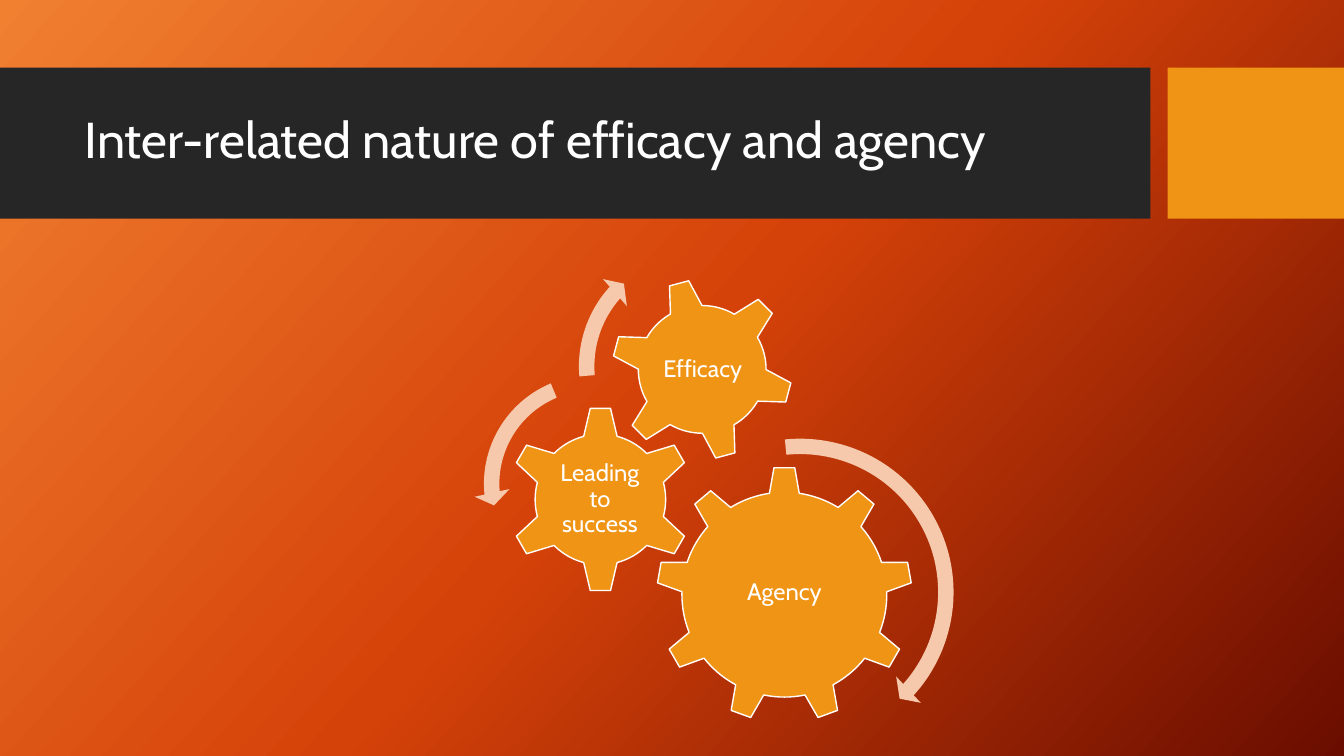
from copy import deepcopy

from pptx import Presentation
from pptx.dml.color import RGBColor
from pptx.enum.shapes import MSO_SHAPE
from pptx.enum.text import MSO_ANCHOR, MSO_AUTO_SIZE, PP_ALIGN
from pptx.oxml.ns import qn
from pptx.util import Inches, Pt

RECTANGLE = MSO_SHAPE.RECTANGLE
GEAR_SIX, GEAR_NINE = MSO_SHAPE.GEAR_6, MSO_SHAPE.GEAR_9
ARROW, LEFT_ARROW = MSO_SHAPE.CIRCULAR_ARROW, MSO_SHAPE.LEFT_CIRCULAR_ARROW
MIDDLE, NO_FIT = MSO_ANCHOR.MIDDLE, MSO_AUTO_SIZE.NONE
LEFT, CENTER = PP_ALIGN.LEFT, PP_ALIGN.CENTER

WHITE = RGBColor(0xFF, 0xFF, 0xFF)
CHARCOAL = RGBColor(0x26, 0x26, 0x26)
ORANGE = RGBColor(0xF0, 0x94, 0x15)
PEACH = RGBColor(0xF6, 0xC8, 0xAC)
FONT = "Cabin"

GRADIENT = [
    (0, RGBColor(0xF1, 0x80, 0x31)),
    (0.5, RGBColor(0xD5, 0x42, 0x09)),
    (1, RGBColor(0x6A, 0x0D, 0x00)),
]
GRADIENT_ANGLE = 360 - 42

TITLE = "Inter-related nature of efficacy and agency"
TITLE_BOX = (0.74, 0.82, 10.51, 1.18)
BANDS = [((0, 0.67, 11.41, 1.5), CHARCOAL), ((11.58, 0.67, 1.75, 1.5), ORANGE)]

GEARS = [
    ("Agency", GEAR_NINE, (6.51, 4.63, 2.54), 0, (7.02, 5.23, 1.52, 1.3)),
    ("Leading to success", GEAR_SIX, (5.03, 4.03, 1.85), 0, (5.49, 4.5, 0.92, 0.91)),
    ("Efficacy", GEAR_SIX, (6.06, 2.76, 1.81), 345, (6.46, 3.16, 1.02, 1.02)),
]
ARROWS = [
    (ARROW, (6.31, 4.25, 3.25), (0.047, 2.99, 25.169, 158.598, 0.055)),
    (LEFT_ARROW, (4.7, 3.62, 2.36), (0.065, 4.3, 104.891, 148.378, 0.075)),
    (ARROW, (5.64, 2.36, 2.55), (0.06, 3.941, 133.138, 105.082, 0.07)),
]


def add_filled(page, kind, box, color):
    """Add a flat preset shape without an outline."""
    shape = page.shapes.add_shape(kind, *map(Inches, box))
    shape.shadow.inherit = False
    shape.fill.solid()
    shape.fill.fore_color.rgb = color
    shape.line.fill.background()
    return shape


def write(shape, text, size, alignment):
    """Put one vertically centred white paragraph in a shape."""
    frame = shape.text_frame
    frame.text = text
    frame.word_wrap = True
    frame.auto_size = NO_FIT
    frame.vertical_anchor = MIDDLE
    para = frame.paragraphs[0]
    para.alignment = alignment
    para.line_spacing = 0.9
    font = para.runs[0].font
    font.name, font.size, font.color.rgb = FONT, Pt(size), WHITE
    return frame


def paint_background(page):
    """Fill the page with the three-stop gradient."""
    fill = page.background.fill
    fill.gradient()
    fill.gradient_angle = GRADIENT_ANGLE
    stops = page.element.find(".//" + qn("a:gsLst"))
    stops.append(deepcopy(stops[-1]))
    for stop, (position, color) in zip(fill.gradient_stops, GRADIENT):
        stop.position = position
        stop.color.rgb = color


def add_title(page):
    """Place the title above its two bands."""
    for box, color in BANDS:
        add_filled(page, RECTANGLE, box, color)
    title = page.shapes.title
    title.left, title.top, title.width, title.height = map(Inches, TITLE_BOX)
    write(title, TITLE, 36, LEFT)
    title.element.getparent().append(title.element)


def add_gear(page, label, kind, place, rotation, label_box):
    """Draw a gear and its upright label."""
    left, top, size = place
    gear = add_filled(page, kind, (left, top, size, size), ORANGE)
    gear.rotation = rotation
    gear.line.color.rgb = WHITE
    gear.line.width = Pt(1)
    frame = write(page.shapes.add_textbox(*map(Inches, label_box)), label, 17, CENTER)
    frame.margin_left = frame.margin_right = Inches(0.02)
    frame.margin_top = frame.margin_bottom = Inches(0.02)
    frame.paragraphs[0].space_after = Pt(6)


def main():
    """Build and save the slide."""
    deck = Presentation()
    deck.slide_width, deck.slide_height = Inches(13.33), Inches(7.5)
    page = deck.slides.add_slide(deck.slide_layouts[5])
    paint_background(page)
    add_title(page)
    for gear in GEARS:
        add_gear(page, *gear)
    for kind, (left, top, size), adjustments in ARROWS:
        arrow = add_filled(page, kind, (left, top, size, size), PEACH)
        for index, value in enumerate(adjustments):
            arrow.adjustments[index] = value
    deck.save("out.pptx")


if __name__ == "__main__":
    main()
